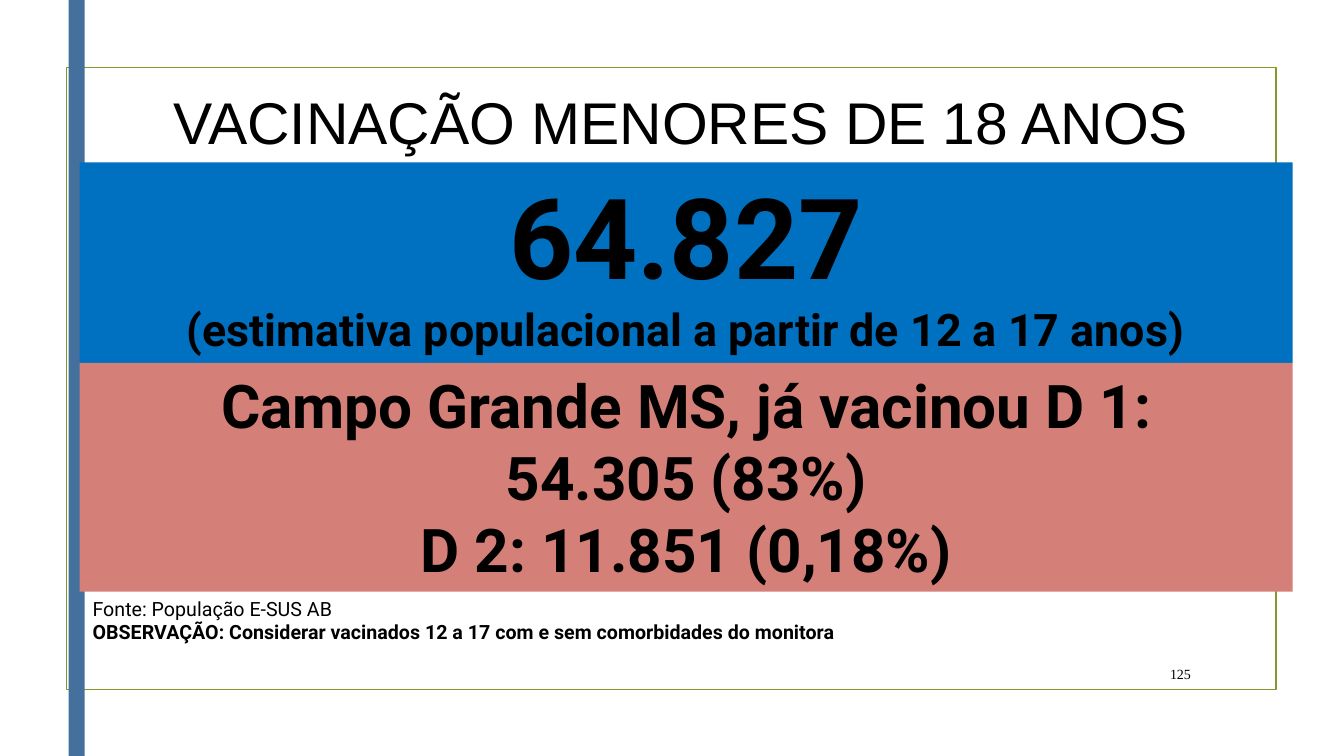
from dataclasses import dataclass

import pptx
import pptx.dml.color
import pptx.enum.shapes
import pptx.enum.text
import pptx.util

Inches = pptx.util.Inches
Align = pptx.enum.text.PP_ALIGN
Anchor = pptx.enum.text.MSO_ANCHOR


@dataclass
class Line:
    text: str
    size: float
    bold: bool = False
    font: str = "Roboto"


@dataclass
class Area:
    left: float
    top: float
    width: float
    height: float


@dataclass
class Band:
    area: Area
    fill: str
    lines: list[Line]


@dataclass
class Note:
    area: Area
    lines: list[Line]
    align: Align
    anchor: Anchor


FRAME = Area(0.66, 0.67, 12, 6.17)
SIDEBAR = Area(0.68, 0, 0.16, 7.5)
TITLE = Area(0.85, 0.8, 11.81, 0.81)

BANDS = [
    Band(Area(0.79, 1.61, 12.03, 1.99), "0070C0", [
        Line("64.827", 80, True),
        Line("(estimativa populacional a partir de 12 a 17 anos)", 32, True),
    ]),
    Band(Area(0.79, 3.6, 12.03, 2.27), "D47F77", [
        Line("Campo Grande MS, já vacinou D 1:", 43, True),
        Line("54.305 (83%)", 43, True),
        Line("D 2: 11.851 (0,18%)", 43, True),
    ]),
]

NOTES = [
    Note(Area(0.82, 5.87, 11.87, 0.57), [
        Line("Fonte: População E-SUS AB", 14),
        Line("OBSERVAÇÃO: Considerar vacinados 12 a 17 com e sem comorbidades do monitora", 14, True),
    ], Align.LEFT, Anchor.TOP),
    Note(Area(11.32, 6.53, 0.59, 0.31), [Line("125", 10, font="Times New Roman")],
         Align.RIGHT, Anchor.MIDDLE),
]


def color(value: str) -> pptx.dml.color.RGBColor:
    return pptx.dml.color.RGBColor.from_string(value)


def bounds(area: Area) -> tuple:
    return Inches(area.left), Inches(area.top), Inches(area.width), Inches(area.height)


def write(box, lines: list[Line], align: Align = Align.CENTER, anchor: Anchor = Anchor.TOP) -> None:
    frame = box.text_frame
    frame.word_wrap = True
    frame.auto_size = pptx.enum.text.MSO_AUTO_SIZE.NONE
    frame.vertical_anchor = anchor
    for index, line in enumerate(lines):
        para = frame.add_paragraph() if index else frame.paragraphs[0]
        para.alignment = align
        span = para.add_run()
        span.text = line.text
        span.font.name = line.font
        span.font.size = pptx.util.Pt(line.size)
        span.font.bold = line.bold
        span.font.color.rgb = color("000000")


def add_rectangle(page, area: Area, fill: str | None = None, outline: str | None = None):
    box = page.shapes.add_shape(pptx.enum.shapes.MSO_SHAPE.RECTANGLE, *bounds(area))
    box.shadow.inherit = False
    if fill:
        box.fill.solid()
        box.fill.fore_color.rgb = color(fill)
    else:
        box.fill.background()
    if outline:
        box.line.color.rgb = color(outline)
        box.line.width = pptx.util.Pt(1.25)
    else:
        box.line.fill.background()
    return box


def main() -> None:
    deck = pptx.Presentation()
    deck.slide_width, deck.slide_height = Inches(13.33), Inches(7.5)
    page = deck.slides.add_slide(deck.slide_layouts[5])

    add_rectangle(page, FRAME, outline="83992A")
    add_rectangle(page, SIDEBAR, fill="44709D")

    title = page.shapes.title
    title.left, title.top, title.width, title.height = bounds(TITLE)
    write(title, [Line("VACINAÇÃO MENORES DE 18 ANOS", 42, font="Arial")])

    for band in BANDS:
        write(add_rectangle(page, band.area, fill=band.fill), band.lines)
    for note in NOTES:
        write(page.shapes.add_textbox(*bounds(note.area)), note.lines, note.align, note.anchor)

    deck.save("out.pptx")


if __name__ == "__main__":
    main()
